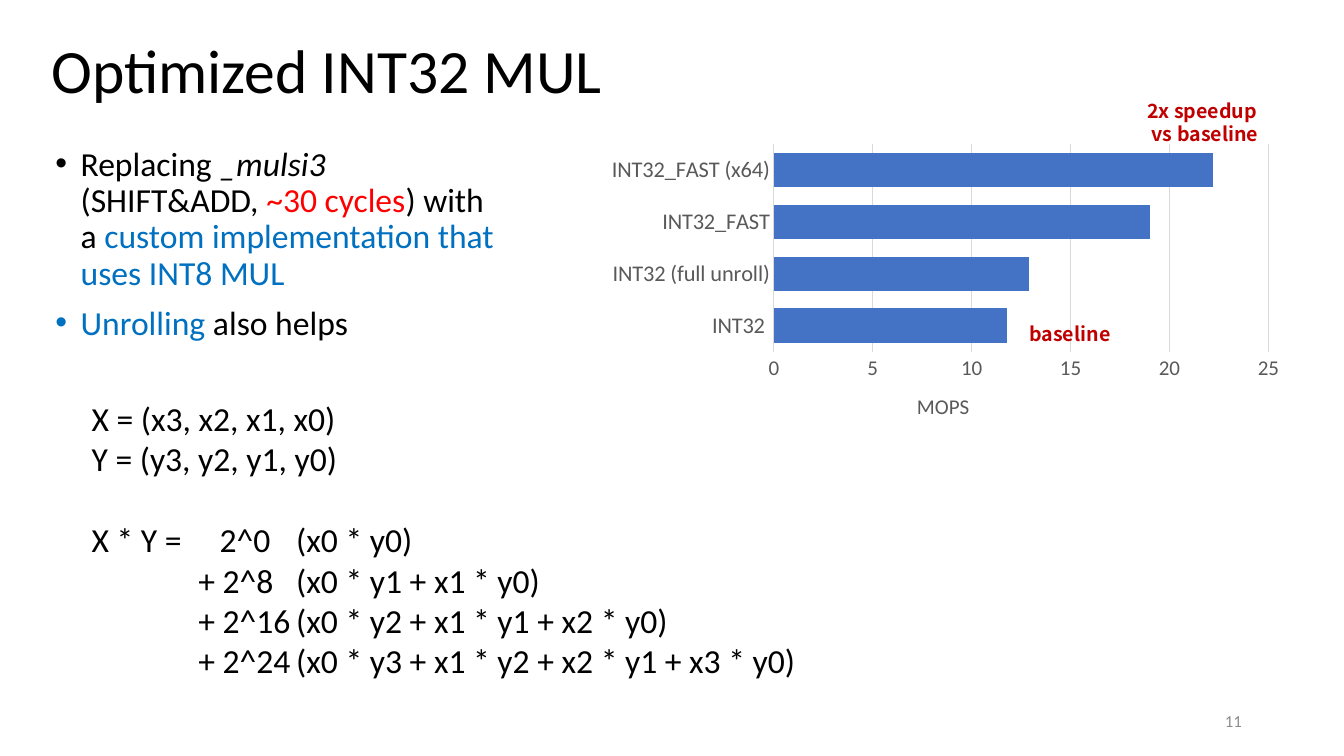
from lxml import etree
from pptx import Presentation, util as u
from pptx.chart.data import CategoryChartData
from pptx.dml.color import RGBColor
from pptx.enum import chart as charts, text
from pptx.oxml import ns

# Grid of 40 columns; rows have the same pitch
SLIDE_WIDTH, SLIDE_HEIGHT = 13.33, 7.5
UNIT = SLIDE_WIDTH / 40

BLACK, RED, BLUE, DARK_RED = "000000", "FF0000", "0070C0", "C00000"
BAR, LABEL, GRID, NUMBER = "4472C4", "595959", "D9D9D9", "8C8C8C"

BULLETS = [
    [("Replacing ", BLACK), ("_mulsi3", BLACK, True), (" (SHIFT&ADD, ", BLACK),
     ("~30 cycles", RED), (") with a ", BLACK),
     ("custom implementation that uses INT8 MUL", BLUE)],
    [("Unrolling", BLUE), (" also helps", BLACK)],
]
OPERANDS = ["X = (x3, x2, x1, x0)", "Y = (y3, y2, y1, y0)"]
PRODUCT = [
    "X * Y =\t2^0\t(x0 * y0)",
    "\t+ 2^8\t(x0 * y1 + x1 * y0)",
    "\t+ 2^16\t(x0 * y2 + x1 * y1 + x2 * y0)",
    "\t+ 2^24\t(x0 * y3 + x1 * y2 + x2 * y1 + x3 * y0)",
]
PLUS_STOP, POWER_STOP, FACTOR_STOP = 1.06, 1.27, 2.03
THROUGHPUT = {"INT32 ": 11.8, "INT32 (full unroll)": 12.9,
              "INT32_FAST": 19, "INT32_FAST (x64)": 22.2}


def color(value):
    return RGBColor.from_string(value)


def cells(*values):
    return [u.Inches(value * UNIT) for value in values]


def style(font, size, value, bold=False, italic=False, name="Calibri"):
    font.name, font.size = name, u.Pt(size)
    font.bold, font.italic = bold, italic
    font.color.rgb = color(value)


def place(shape, *box):
    shape.left, shape.top, shape.width, shape.height = cells(*box)
    shape.text_frame.auto_size = text.MSO_AUTO_SIZE.NONE
    shape.text_frame.word_wrap = True


def add_text(slide, box, lines, size, value, wrap=True, **font):
    frame = slide.shapes.add_textbox(*cells(*box)).text_frame
    frame.word_wrap = wrap
    frame.text = "\n".join(lines)
    for paragraph in frame.paragraphs:
        for run in paragraph.runs:
            style(run.font, size, value, **font)
    return frame


def add_note(slide, box, lines):
    frame = add_text(slide, box, lines, 14, DARK_RED, wrap=False,
                     bold=True, name="Noto Sans CJK SC")
    frame.margin_left = frame.margin_right = 0
    frame.margin_top = frame.margin_bottom = 0


def set_tabs(paragraph, stops):
    tabs = etree.SubElement(paragraph._p.get_or_add_pPr(), ns.qn("a:tabLst"))
    for stop in stops:
        etree.SubElement(tabs, ns.qn("a:tab"), pos=str(u.Inches(stop)), algn="l")


def fill_title(title):
    place(title, 1.23, 0, 34.5, 4.35)
    title.text_frame.text = "Optimized INT32 MUL"
    title.text_frame.vertical_anchor = text.MSO_ANCHOR.MIDDLE
    paragraph = title.text_frame.paragraphs[0]
    paragraph.alignment = text.PP_ALIGN.LEFT
    paragraph.line_spacing = 0.9
    style(paragraph.runs[0].font, 44, BLACK)


def fill_bullets(body):
    place(body, 1.35, 4.23, 13.92, 6.78)
    frame = body.text_frame
    frame.text = "\n".join("" for _ in BULLETS)
    for paragraph, parts in zip(frame.paragraphs, BULLETS):
        paragraph.line_spacing, paragraph.space_before = 0.9, u.Pt(10)
        properties = paragraph._p.get_or_add_pPr()
        properties.set("marL", str(u.Inches(0.25)))
        properties.set("indent", str(u.Inches(-0.25)))
        etree.SubElement(properties, ns.qn("a:buChar"), char="•")
        for words, value, *italic in parts:
            run = paragraph.add_run()
            run.text = words
            style(run.font, 24, value, italic=bool(italic))


def set_layout(parent, after, **shares):
    """Fix a chart part at shares of the chart's size."""
    for old in parent.findall(ns.qn("c:layout")):
        parent.remove(old)
    layout = etree.Element(ns.qn("c:layout"))
    manual = etree.SubElement(layout, ns.qn("c:manualLayout"))
    for tag, value in shares.items():
        etree.SubElement(manual, ns.qn("c:" + tag), val=str(value))
    parent.insert(after, layout)


def add_throughput_chart(slide):
    data = CategoryChartData()
    data.categories = list(THROUGHPUT)
    data.add_series("Series 1", list(THROUGHPUT.values()))
    chart = slide.shapes.add_chart(charts.XL_CHART_TYPE.BAR_CLUSTERED,
                                   *cells(17.85, 4.11, 20.73, 9.09), data).chart
    chart.has_legend = chart.has_title = False
    style(chart.font, 10, BLACK)

    # Bars
    plot = chart.plots[0]
    plot.gap_width, plot.vary_by_categories = 50, False
    fill = plot.series[0].format.fill
    fill.solid()
    fill.fore_color.rgb = color(BAR)

    # Axes
    category, value = chart.category_axis, chart.value_axis
    for axis, size in ((category, 16), (value, 15)):
        axis.major_tick_mark = axis.minor_tick_mark = charts.XL_TICK_MARK.NONE
        style(axis.tick_labels.font, size, LABEL)
    value.minimum_scale, value.maximum_scale, value.major_unit = 0, 25, 5
    value.format.line.fill.background()
    value.has_major_gridlines = True
    for line in (category.format.line, value.major_gridlines.format.line):
        line.color.rgb, line.width = color(GRID), u.Pt(0.75)
    title = value.axis_title
    title.text_frame.text = "MOPS"
    style(title.text_frame.paragraphs[0].runs[0].font, 15, LABEL)

    # Layout
    set_layout(title._element, 1, xMode="edge", yMode="edge", x=0.45, y=0.82)
    set_layout(chart._chartSpace.find(".//" + ns.qn("c:plotArea")), 0,
               layoutTarget="inner", xMode="edge", yMode="edge",
               x=0.25, y=0.02, w=0.71, h=0.68)


def add_formula(slide):
    frame = add_text(slide, (2.43, 11.7, 22.35, 8.79), OPERANDS + PRODUCT, 24, BLACK)
    first, *others = frame.paragraphs[len(OPERANDS):]
    first.space_before = u.Pt(29)
    set_tabs(first, (POWER_STOP, FACTOR_STOP))
    for paragraph in others:
        set_tabs(paragraph, (PLUS_STOP, FACTOR_STOP))


def add_slide_number(slide):
    frame = add_text(slide, (28.26, 20.85, 9, 1.2), ["11"], 12, NUMBER)
    frame.vertical_anchor = text.MSO_ANCHOR.MIDDLE
    frame.paragraphs[0].alignment = text.PP_ALIGN.RIGHT


def main():
    presentation = Presentation()
    presentation.slide_width = u.Inches(SLIDE_WIDTH)
    presentation.slide_height = u.Inches(SLIDE_HEIGHT)
    slide = presentation.slides.add_slide(presentation.slide_layouts[1])
    fill_title(slide.shapes.title)
    fill_bullets(slide.placeholders[1])
    add_throughput_chart(slide)
    add_note(slide, (30.63, 9.57, 2.43, 0.72), ["baseline"])
    add_note(slide, (34.14, 2.94, 3.42, 1.41), ["2x speedup", " vs baseline"])
    add_formula(slide)
    add_slide_number(slide)
    presentation.save("out.pptx")


if __name__ == "__main__":
    main()
